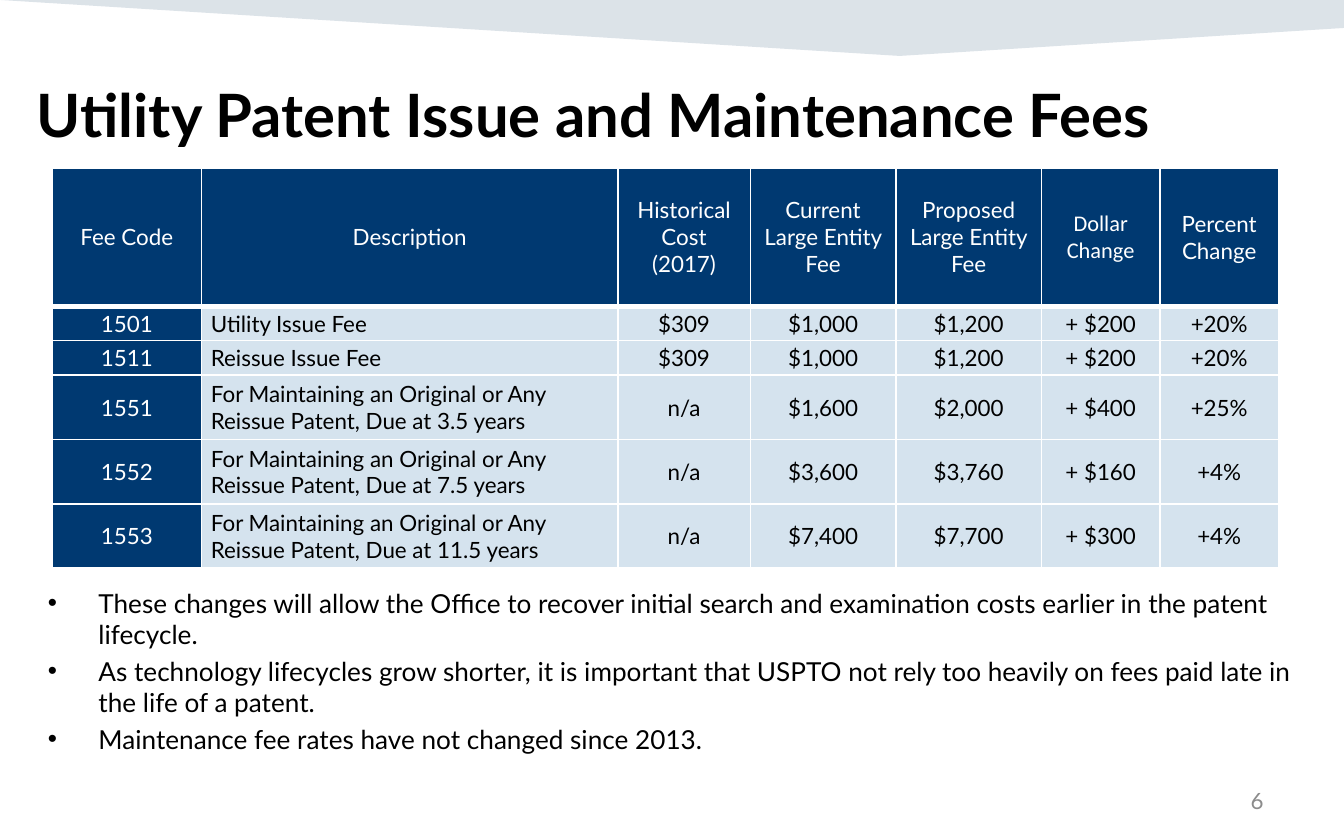
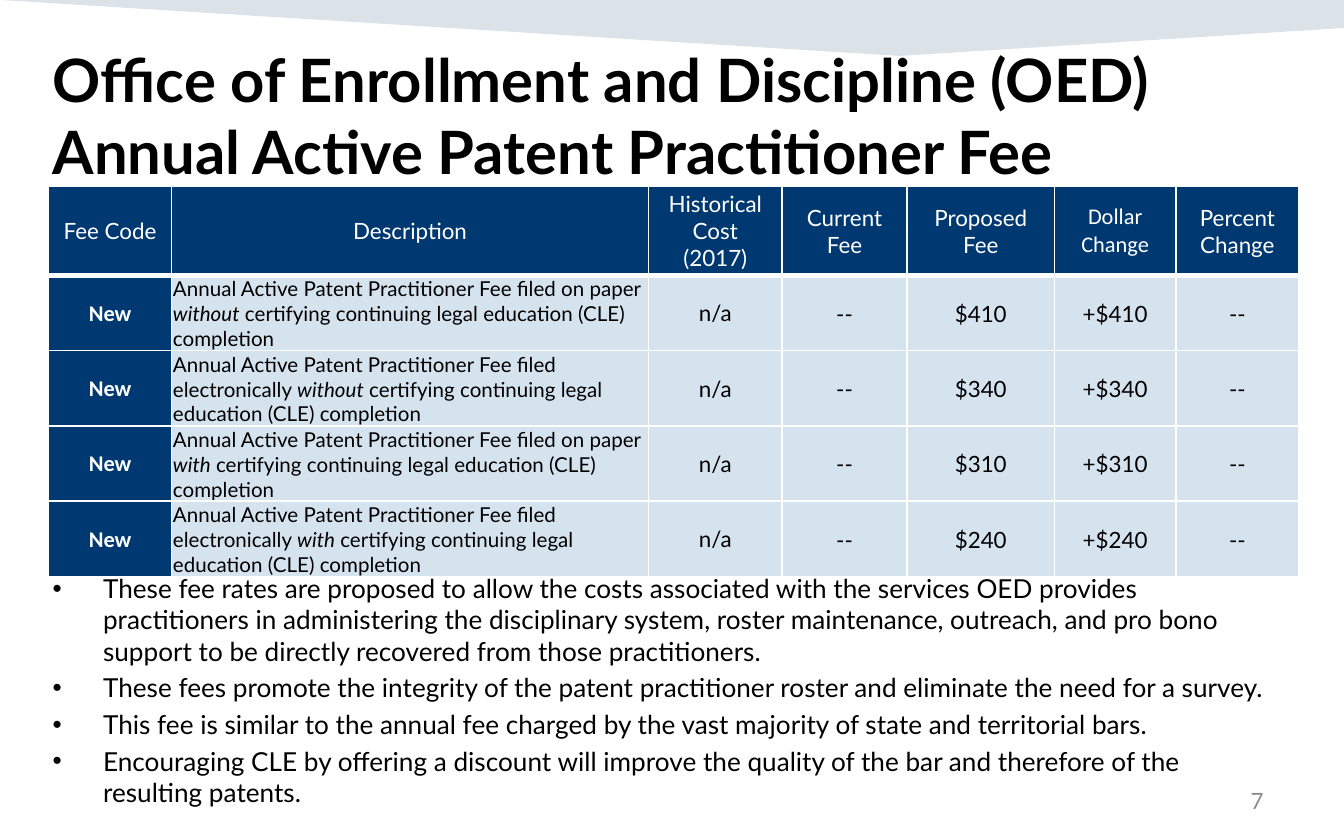
from itertools import product

from lxml.etree import SubElement
from pptx import Presentation
from pptx.dml.color import RGBColor
from pptx.enum.text import MSO_ANCHOR as Anchor, MSO_AUTO_SIZE as AutoSize, PP_ALIGN as Align
from pptx.oxml.ns import qn
from pptx.util import Pt

COLORS = {"navy": "003971", "pale": "D5E3EE", "band": "164469",
          "white": "FFFFFF", "black": "000000", "gray": "8C8C8C"}
BASE_FONT = {"name": "Lato", "size": Pt(12), "bold": False}
TITLE_FONT = {"size": Pt(32), "bold": True}
BULLET_FONT = {"size": Pt(14)}
NUMBER_BOX = (516, 417, 168, 24)
BAND_POINTS = [(0, 0), (720, 0), (720, 15), (482, 29.5)]
BULLET_INDENT = Pt(27)
CELL_INSET = 5

ISSUE_FEES = {
    "number": "6",
    "title": "Utility Patent Issue and Maintenance Fees",
    "title_box": (12.5, 38, 702, 58),
    "table_origin": (28, 90),
    "columns": [80, 223, 71, 78, 78, 63.5, 63.5],
    "heights": [74, 18.5, 18.5, 34.5, 34.5, 34.5],
    "fee_heads": ["Current Large Entity Fee", "Proposed Large Entity Fee"],
    "rows": [
        ["1501", "Utility Issue Fee", "$309", "$1,000", "$1,200", "+ $200", "+20%"],
        ["1511", "Reissue Issue Fee", "$309", "$1,000", "$1,200", "+ $200", "+20%"],
    ] + [
        [code, f"For Maintaining an Original or Any Reissue Patent, Due at {years} years",
         "n/a", *fees]
        for code, years, *fees in [
            ("1551", "3.5", "$1,600", "$2,000", "+ $400", "+25%"),
            ("1552", "7.5", "$3,600", "$3,760", "+ $160", "+4%"),
            ("1553", "11.5", "$7,400", "$7,700", "+ $300", "+4%")]
    ],
    "code_font": {},
    "description_font": {},
    "inset": CELL_INSET,
    "bullets_box": (18.5, 311, 689, 130),
    "bullets": [
        "These changes will allow the Office to recover initial search and examination costs "
        "earlier in the patent lifecycle.",
        "As technology lifecycles grow shorter, it is important that USPTO not rely too heavily "
        "on fees paid late in the life of a patent.",
        "Maintenance fee rates have not changed since 2013.",
    ],
}

PRACTITIONER_FEES = {
    "number": "7",
    "title": "Office of Enrollment and Discipline (OED) Annual Active Patent Practitioner Fee",
    "title_box": (21, 19.5, 702, 70),
    "table_origin": (26, 100),
    "columns": [66, 255.5, 71.5, 67, 79, 65, 66],
    "heights": [47.5] + [39] * 4,
    "fee_heads": ["Current Fee", "Proposed Fee"],
    "rows": [
        ["New", f"Annual Active Patent Practitioner Fee filed {filing} *{certifying}* certifying "
                "continuing legal education (CLE) completion",
         "n/a", "--", f"${fee}", f"+${fee}", "--"]
        for (certifying, filing), fee in zip(
            product(["without", "with"], ["on paper", "electronically"]), [410, 340, 310, 240])
    ],
    "code_font": {"name": "Calibri", "bold": True},
    "description_font": {"size": Pt(11)},
    "inset": 0.7,
    "bullets_box": (21, 303, 675, 114),
    "bullets": [
        "These fee rates are proposed to allow the costs associated with the services OED "
        "provides practitioners in administering the disciplinary system, roster maintenance, "
        "outreach, and pro bono support to be directly recovered from those practitioners.",
        "These fees promote the integrity of the patent practitioner roster and eliminate the "
        "need for a survey.",
        "This fee is similar to the annual fee charged by the vast majority of state and "
        "territorial bars.",
        "Encouraging CLE by offering a discount will improve the quality of the bar and "
        "therefore of the resulting patents.",
    ],
}


def rgb(color):
    """Return the named colour."""
    return RGBColor.from_string(COLORS[color])


def set_all(target, values):
    """Set every attribute of a format dict on the target."""
    for attribute, value in values.items():
        setattr(target, attribute, value)


def place(shape, box):
    """Move a shape into a box given in points."""
    set_all(shape, dict(zip(("left", "top", "width", "height"), map(Pt, box))))


def write(frame, text, color, font, align=Align.LEFT):
    """Write lines as paragraphs, with words between asterisks in italics."""
    for index, line in enumerate(text.split("\n")):
        paragraph = frame.add_paragraph() if index else frame.paragraphs[0]
        paragraph.alignment = align
        for part, words in enumerate(line.split("*")):
            run = paragraph.add_run()
            run.text = words
            set_all(run.font, {**BASE_FONT, **font, "italic": part % 2 == 1})
            run.font.color.rgb = rgb(color)


def add_band(slide, master):
    """Draw the translucent top band and put it on the master."""
    builder = slide.shapes.build_freeform(0, 0, scale=Pt(1))
    builder.add_line_segments(BAND_POINTS[1:], close=True)
    band = builder.convert_to_shape()
    band.shadow.inherit = False
    band.fill.solid()
    band.fill.fore_color.rgb = rgb("band")
    band.line.fill.background()
    tint = next(band.element.iter(qn("a:srgbClr")))
    SubElement(tint, qn("a:alpha"), val="15000")
    band.element.nvSpPr.cNvPr.set("id", "20")
    master.shapes.element.insert(2, band.element)


def add_title(slide, text, box):
    """Fill the title placeholder."""
    title = slide.shapes.title
    place(title, box)
    set_all(title.text_frame, {"vertical_anchor": Anchor.TOP, "auto_size": AutoSize.NONE,
                               "word_wrap": True})
    write(title.text_frame, text, "black", TITLE_FONT)


def add_bullets(slide, bullets, box):
    """Fill the body placeholder with a bulleted list."""
    body = slide.placeholders[1]
    place(body, box)
    set_all(body.text_frame, {"vertical_anchor": Anchor.TOP, "auto_size": AutoSize.NONE,
                              "word_wrap": True})
    write(body.text_frame, "\n".join(bullets), "black", BULLET_FONT)
    for index, paragraph in enumerate(body.text_frame.paragraphs):
        properties = paragraph._p.get_or_add_pPr()
        properties.set("marL", str(BULLET_INDENT))
        properties.set("indent", str(-BULLET_INDENT))
        SubElement(properties, qn("a:buChar"), char="•")
        paragraph.space_before = Pt(2.8 if index else 0)


def add_number(slide, number):
    """Write the slide number at the bottom right."""
    frame = slide.shapes.add_textbox(*map(Pt, NUMBER_BOX)).text_frame
    set_all(frame, {"word_wrap": True, "vertical_anchor": Anchor.MIDDLE})
    write(frame, number, "gray", {}, Align.RIGHT)


def style_cell(cell, fill, inset, bottom_width):
    """Give a cell its fill, margins and white borders."""
    top_inset = 0 if inset == CELL_INSET else inset
    set_all(cell, {"margin_left": Pt(inset), "margin_right": Pt(inset),
                   "margin_top": Pt(top_inset), "margin_bottom": 0,
                   "vertical_anchor": Anchor.MIDDLE})
    properties = cell._tc.get_or_add_tcPr()
    for side in "LRTB":
        width = bottom_width if side == "B" else 1
        border = SubElement(properties, qn(f"a:ln{side}"), w=str(Pt(width)))
        SubElement(SubElement(border, qn("a:solidFill")), qn("a:srgbClr"), val=COLORS["white"])
    cell.fill.solid()
    cell.fill.fore_color.rgb = rgb(fill)


def add_fee_table(slide, content):
    """Build the fee table with a navy header row and code column."""
    columns, heights = content["columns"], content["heights"]
    heads = ["Fee Code", "Description", "Historical Cost\n(2017)", *content["fee_heads"],
             "Dollar Change", "Percent Change"]
    box = (*content["table_origin"], sum(columns), sum(heights))
    table = slide.shapes.add_table(len(heights), len(columns), *map(Pt, box)).table
    table.horz_banding = False
    for column, width in zip(table.columns, columns):
        column.width = Pt(width)
    for row, height in zip(table.rows, heights):
        row.height = Pt(height)
    fonts = {0: content["code_font"], 1: content["description_font"]}
    for r, texts in enumerate([heads, *content["rows"]]):
        for c, text in enumerate(texts):
            header, navy = r == 0, r == 0 or c == 0
            if header:
                font = {"name": "Calibri"} if text == "Dollar Change" else {}
            else:
                font = fonts.get(c, {})
            cell = table.cell(r, c)
            inset = CELL_INSET if header or c == 2 else content["inset"]
            style_cell(cell, "navy" if navy else "pale", inset, 3 if header else 1)
            write(cell.text_frame, text, "white" if navy else "black", font,
                  Align.LEFT if c == 1 and not header else Align.CENTER)


def add_fee_slide(deck, content):
    """Add one slide with a title, a fee table and bullets."""
    slide = deck.slides.add_slide(deck.slide_layouts[1])
    add_number(slide, content["number"])
    add_bullets(slide, content["bullets"], content["bullets_box"])
    add_fee_table(slide, content)
    add_title(slide, content["title"], content["title_box"])
    return slide


def main():
    """Build and save the deck."""
    deck = Presentation()
    set_all(deck, {"slide_width": Pt(720), "slide_height": Pt(450)})
    slides = [add_fee_slide(deck, content) for content in (ISSUE_FEES, PRACTITIONER_FEES)]
    add_band(slides[0], deck.slide_master)
    deck.save("out.pptx")


if __name__ == "__main__":
    main()
